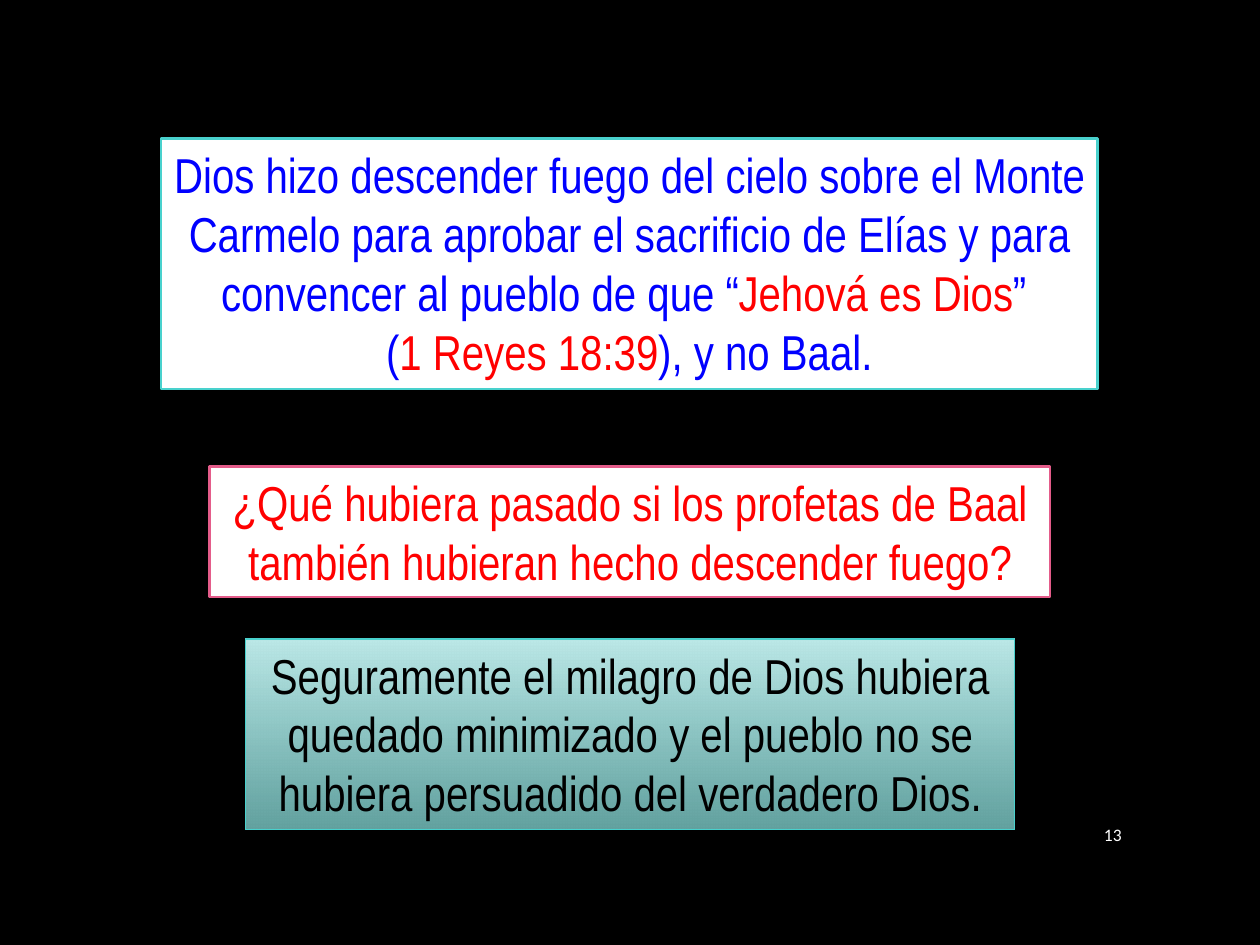
from lxml.etree import SubElement
from pptx import Presentation
from pptx.dml.color import RGBColor
from pptx.enum.shapes import MSO_SHAPE
from pptx.enum.text import MSO_ANCHOR, MSO_AUTO_SIZE, PP_ALIGN
from pptx.oxml.ns import qn
from pptx.util import Cm, Pt

COLORS = {
    "black": "000000",
    "white": "FFFFFF",
    "blue": "0000FF",
    "red": "FF0000",
    "teal": "49D1CD",
    "pink": "E45C8A",
    "mint": "BCE9E8",
    "sea": "86DAD7",
}


def rgb(name):
    return RGBColor.from_string(COLORS[name])


def outline_run(run, color):
    """Add a text outline, which goes before the fill of the run."""
    properties = run.font._element
    line = SubElement(properties, qn("a:ln"), w=str(Pt(1.5)))
    SubElement(SubElement(line, qn("a:solidFill")), qn("a:srgbClr"), val=COLORS[color])
    properties.insert(0, line)


def write(frame, paragraphs, *, font, size, align, outline=False):
    """Fill a text frame with paragraphs, each a list of (text, color) runs."""
    for index, runs in enumerate(paragraphs):
        paragraph = frame.add_paragraph() if index else frame.paragraphs[0]
        paragraph.alignment = align
        for text, color in runs:
            run = paragraph.add_run()
            run.text = text
            run.font.name, run.font.size = font, Pt(size)
            run.font.color.rgb = rgb(color)
            if outline:
                outline_run(run, color)


class SlideBuilder:
    panel_font, panel_size = "Arial Narrow", 28
    number_font, number_size = "Calibri", 10

    def __init__(self, slide):
        self.slide = slide

    def background(self, color):
        fill = self.slide.background.fill
        fill.solid()
        fill.fore_color.rgb = rgb(color)

    def panel(self, left, top, width, height, paragraphs, border, border_width=1.5):
        panel = self.slide.shapes.add_shape(
            MSO_SHAPE.RECTANGLE, Cm(left), Cm(top), Cm(width), Cm(height))
        panel.shadow.inherit = False
        panel.fill.solid()
        panel.fill.fore_color.rgb = rgb("white")
        panel.line.color.rgb = rgb(border)
        panel.line.width = Pt(border_width)
        frame = panel.text_frame
        frame.word_wrap = True
        frame.auto_size = MSO_AUTO_SIZE.SHAPE_TO_FIT_TEXT
        frame.vertical_anchor = MSO_ANCHOR.TOP
        write(frame, paragraphs, font=self.panel_font, size=self.panel_size,
              align=PP_ALIGN.CENTER, outline=True)
        return panel

    def gradient(self, panel, top_color, bottom_color, bottom_opacity):
        panel.fill.gradient()
        panel.fill.gradient_angle = 270
        stops = panel.fill.gradient_stops
        for stop, color, position in zip(stops, (top_color, bottom_color), (0, 1)):
            stop.color.rgb = rgb(color)
            stop.position = position
        last_color = list(panel._element.spPr.iter(qn("a:gs")))[-1][0]
        SubElement(last_color, qn("a:alpha"), val=str(bottom_opacity * 1000))

    def page_number(self, left, top, width, height, number):
        frame = self.slide.shapes.add_textbox(
            Cm(left), Cm(top), Cm(width), Cm(height)).text_frame
        frame.word_wrap = True
        frame.vertical_anchor = MSO_ANCHOR.MIDDLE
        write(frame, [[(number, "white")]], font=self.number_font,
              size=self.number_size, align=PP_ALIGN.RIGHT)


def main():
    presentation = Presentation()
    presentation.slide_width, presentation.slide_height = Cm(25.4), Cm(19.05)
    builder = SlideBuilder(presentation.slides.add_slide(presentation.slide_layouts[6]))
    builder.background("black")

    # Answer
    answer = builder.panel(4.95, 12.88, 15.5, 3.84, [[(
        "Seguramente el milagro de Dios hubiera quedado minimizado y el pueblo "
        "no se hubiera persuadido del verdadero Dios.", "black")]], "teal", 0.75)
    builder.gradient(answer, "mint", "sea", 74)

    # Question
    builder.panel(4.22, 9.4, 16.95, 2.64, [[(
        "¿Qué hubiera pasado si los profetas de Baal también hubieran hecho "
        "descender fuego?", "red")]], "pink")

    # Page number
    builder.page_number(21.69, 16.31, 1.17, 1.04, "13")

    # Bible account
    builder.panel(3.25, 2.79, 18.87, 5.05, [
        [("Dios hizo descender fuego del cielo sobre el Monte Carmelo para aprobar "
          "el sacrificio de Elías y para convencer al pueblo de que “", "blue"),
         ("Jehová es Dios", "red"), ("” ", "blue")],
        [("(", "blue"), ("1 Reyes 18:39", "red"), ("), y no Baal.", "blue")],
    ], "teal")

    presentation.save("out.pptx")


if __name__ == "__main__":
    main()
